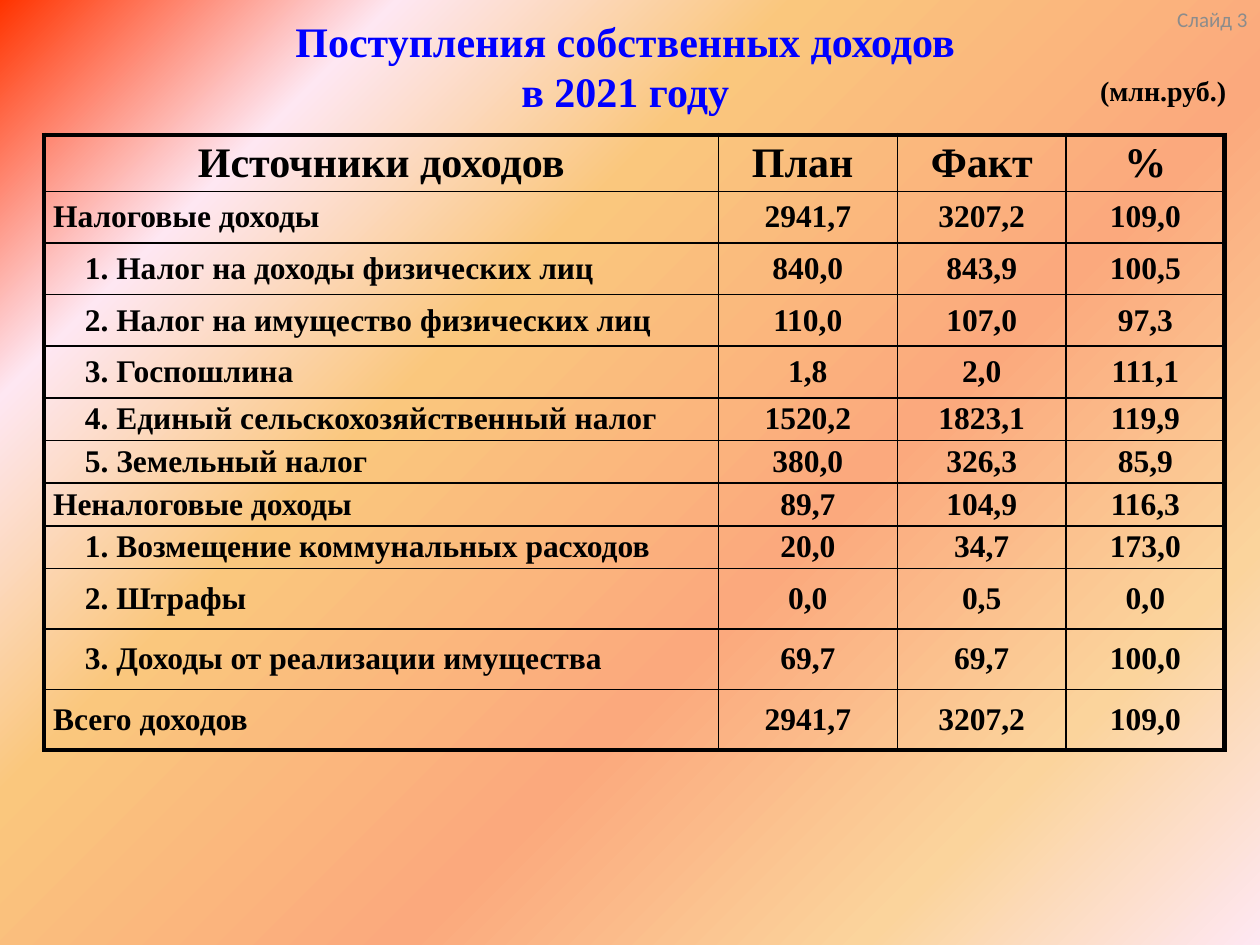
from dataclasses import dataclass

from lxml import etree
from pptx import Presentation
from pptx import util as u
from pptx.dml.color import RGBColor
from pptx.enum import text
from pptx.oxml.ns import qn


@dataclass(frozen=True)
class Theme:
    serif: str = "Times New Roman"
    sans: str = "Calibri"
    title: str = "0000FF"
    ink: str = "000000"
    muted: str = "8C8C8C"
    heading_size: int = 24
    body_size: int = 18
    unit_size: int = 16
    number_size: int = 12
    frame: float = 3
    rule: float = 1
    hairline: float = 0.5
    gradient: tuple = ((0, "FF3300"), (18, "FEE7F2"), (36, "FAC77D"),
                       (61, "FBA97D"), (82, "FBD49C"), (100, "FEE7F2"))


THEME = Theme()
ALIGN = text.PP_ALIGN
ANCHOR = text.MSO_ANCHOR

HEADER = ("Источники доходов", "План ", "Факт", "%")
# Nesting level, source, plan, actual, percent
INCOME = (
    (0, "Налоговые доходы", "2941,7", "3207,2", "109,0"),
    (1, "1. Налог на доходы физических лиц", "840,0", "843,9", "100,5"),
    (1, "2. Налог на имущество физических лиц", "110,0", "107,0", "97,3"),
    (1, "3. Госпошлина", "1,8", "2,0", "111,1"),
    (1, "4. Единый сельскохозяйственный налог", "1520,2", "1823,1", "119,9"),
    (1, "5. Земельный налог", "380,0", "326,3", "85,9"),
    (0, "Неналоговые доходы", "89,7", "104,9", "116,3"),
    (1, "1. Возмещение коммунальных расходов", "20,0", "34,7", "173,0"),
    (1, "2. Штрафы", "0,0", "0,5", "0,0"),
    (1, "3. Доходы от реализации имущества", "69,7", "69,7", "100,0"),
    (0, "Всего доходов", "2941,7", "3207,2", "109,0"),
)
COLUMN_WIDTHS = (13.59, 3.61, 3.4, 3.2)
ROW_HEIGHTS = (1.14,) + (1.04,) * 4 + (0.86,) * 4 + (1.22,) * 3
HAIRLINES_BELOW = (5, 8)
INDENT = u.Cm(0.64)


def write(tf, content, *, size, color=THEME.ink, font=THEME.serif, bold=True,
          align=ALIGN.CENTER, level=0):
    """Fill a text frame; a vertical tab in content is a line break."""
    p = tf.paragraphs[0]
    p.text = content
    p.alignment = align
    if level:
        p._p.get_or_add_pPr().set("marL", str(level * INDENT))
    for r in p.runs:
        r.font.name = font
        r.font.size = u.Pt(size)
        r.font.bold = bold
        r.font.color.rgb = RGBColor.from_string(color)


def add_text(slide, content, left, top, width, height,
             anchor=ANCHOR.MIDDLE, inset=0.0, **style):
    sp = slide.shapes.add_textbox(*map(u.Cm, (left, top, width, height)))
    tf = sp.text_frame
    tf.word_wrap = True
    tf.vertical_anchor = anchor
    tf.margin_left = tf.margin_right = u.Cm(inset)
    write(tf, content, **style)


def fill_background(slide):
    fill = slide.background.fill
    fill.gradient()
    fill.gradient_angle = 315
    stops = slide.element.find(".//" + qn("a:gsLst"))
    for stop in list(stops):
        stops.remove(stop)
    for percent, color in THEME.gradient:
        stop = etree.SubElement(stops, qn("a:gs"), pos=str(percent * 1000))
        etree.SubElement(stop, qn("a:srgbClr"), val=color)


def set_borders(cell, **widths):
    """Draw borders given as L, R, T, B widths in points, in that order."""
    tc_pr = cell._tc.get_or_add_tcPr()
    for side, width in widths.items():
        ln = etree.SubElement(tc_pr, qn(f"a:ln{side}"), w=str(u.Pt(width)))
        fill = etree.SubElement(ln, qn("a:solidFill"))
        etree.SubElement(fill, qn("a:srgbClr"), val=THEME.ink)


def format_cell(cell, row, col):
    last_row, last_col = len(ROW_HEIGHTS) - 1, len(COLUMN_WIDTHS) - 1

    def rule_below(index):
        if index in (-1, last_row):
            return THEME.frame
        return THEME.hairline if index in HAIRLINES_BELOW else THEME.rule

    set_borders(cell,
                L=THEME.frame if col == 0 else THEME.rule,
                R=THEME.frame if col == last_col else THEME.rule,
                T=rule_below(row - 1),
                B=rule_below(row))
    cell.fill.background()
    cell.vertical_anchor = ANCHOR.MIDDLE
    cell.margin_left = cell.margin_right = u.Cm(0.18)
    cell.margin_top = cell.margin_bottom = 0


def add_income_table(slide):
    table = slide.shapes.add_table(
        len(ROW_HEIGHTS), len(COLUMN_WIDTHS), u.Cm(0.89), u.Cm(2.72),
        u.Cm(sum(COLUMN_WIDTHS)), u.Cm(sum(ROW_HEIGHTS))).table
    table.first_row = table.horz_banding = False
    for column, width in zip(table.columns, COLUMN_WIDTHS):
        column.width = u.Cm(width)
    for row, height in zip(table.rows, ROW_HEIGHTS):
        row.height = u.Cm(height)

    for i, (level, *values) in enumerate(((0, *HEADER), *INCOME)):
        for j, value in enumerate(values):
            cell = table.cell(i, j)
            format_cell(cell, i, j)
            is_label = i > 0 and j == 0
            write(cell.text_frame, value,
                  size=THEME.body_size if i else THEME.heading_size,
                  align=ALIGN.JUSTIFY if is_label else ALIGN.CENTER,
                  level=level if is_label else 0)


def main():
    prs = Presentation()
    prs.slide_width, prs.slide_height = u.Cm(25.4), u.Cm(19.05)
    slide = prs.slides.add_slide(prs.slide_layouts[6])
    fill_background(slide)
    add_text(slide, "Поступления собственных доходов \vв 2021 году ",
             0.71, 0.33, 24, 2, size=THEME.heading_size, color=THEME.title)
    add_text(slide, "(млн.руб.)", 21.9, 1.32, 3.1, 1, size=THEME.unit_size)
    add_text(slide, "Слайд 3", 23.29, 0, 2.11, 1.32, anchor=ANCHOR.TOP,
             inset=0.25, size=THEME.number_size, color=THEME.muted,
             font=THEME.sans, bold=False, align=ALIGN.RIGHT)
    add_income_table(slide)
    prs.save("out.pptx")


if __name__ == "__main__":
    main()
